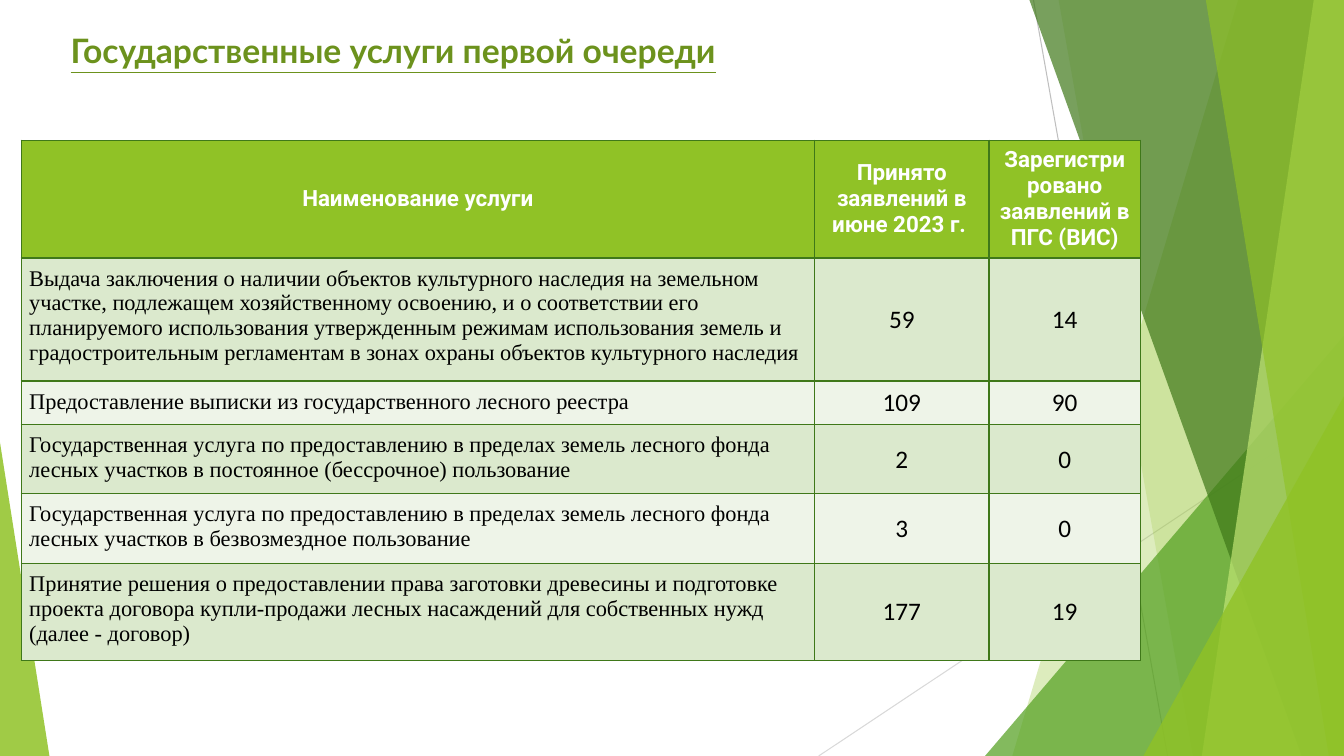
from dataclasses import dataclass

from lxml.etree import SubElement
from pptx import Presentation
from pptx.dml.color import RGBColor
from pptx.dml.fill import FillFormat
from pptx.enum.shapes import MSO_CONNECTOR as Conn, MSO_SHAPE as Kind
from pptx.enum.text import MSO_ANCHOR as Anchor, PP_ALIGN as Align
from pptx.oxml.ns import qn
from pptx.shapes.autoshape import Shape
from pptx.slide import Slide
from pptx.table import _Cell as Cell
from pptx.text.text import TextFrame
from pptx.util import Inches, Pt

LIME = RGBColor(0x90, 0xC2, 0x26)
LEAF = RGBColor(0x54, 0xA0, 0x21)
FOREST = RGBColor(0x3F, 0x78, 0x19)
PALE = RGBColor(0xC0, 0xE4, 0x74)
OLIVE = RGBColor(0x6C, 0x92, 0x1D)
MINT = RGBColor(0xDB, 0xE9, 0xCD)
MIST = RGBColor(0xEE, 0xF4, 0xE8)
GRAY = RGBColor(0xBF, 0xBF, 0xBF)
SILVER = RGBColor(0xD9, 0xD9, 0xD9)
WHITE = RGBColor(0xFF, 0xFF, 0xFF)
BLACK = RGBColor(0, 0, 0)
WIDE, HIGH = 13.33, 7.5


@dataclass
class Ray:
    start: tuple[float, float]
    end: tuple[float, float]
    color: RGBColor


@dataclass
class Band:
    top: float
    foot: float
    color: RGBColor
    alpha: int


@dataclass
class Wedge:
    left: float
    top: float
    width: float
    apex: float
    color: RGBColor
    alpha: int


@dataclass
class Style:
    font: str
    size: int
    color: RGBColor
    bold: bool
    align: Align
    anchor: Anchor
    inset: tuple[float, float, float, float]


@dataclass
class Row:
    height: float
    cells: tuple[str, str, str]


DECOR = [
    Ray((10.25, 0), (11.58, HIGH), GRAY),
    Ray((WIDE, 4.03), (8.12, HIGH), SILVER),
    Band(12.28, 10.04, LIME, 30),
    Band(10.5, 11.83, LIME, 20),
    Wedge(9.77, 3.33, 3.56, 1, LEAF, 72),
    Band(10.21, 12.91, FOREST, 70),
    Band(13.03, 11.92, PALE, 70),
    Band(11.96, 13.18, LIME, 65),
    Wedge(11.34, 3.93, 1.99, 1, LIME, 80),
    Wedge(0, 4.39, 0.49, 0, LIME, 85),
]

TITLE = Style("Lato", 24, OLIVE, True, Align.LEFT, Anchor.TOP, (0.1, 0.05, 0.1, 0.05))
HEAD = Style("Roboto", 16, WHITE, True, Align.CENTER, Anchor.MIDDLE, (0.1, 0.05, 0.1, 0.05))
NAME = Style("Times New Roman", 16, BLACK, False, Align.LEFT, Anchor.TOP, (0.08, 0.08, 0.12, 0.08))
COUNT = Style("Calibri", 18, BLACK, False, Align.CENTER, Anchor.MIDDLE, (0.01, 0.01, 0.01, 0))

COLS = [7.87, 1.73, 1.5]
ROWS = [
    Row(1.17, ("Наименование услуги", "Принято заявлений в июне 2023 г. ",
               "Зарегистрировано заявлений в ПГС (ВИС)")),
    Row(1.22, ("Выдача заключения о наличии объектов культурного наследия на земельном "
               "участке, подлежащем хозяйственному освоению, и о соответствии его "
               "планируемого использования утвержденным режимам использования земель и "
               "градостроительным регламентам в зонах охраны объектов культурного наследия",
               "59", "14")),
    Row(0.43, ("Предоставление выписки из государственного лесного реестра", "109", "90")),
    Row(0.69, ("Государственная услуга по предоставлению в пределах земель лесного фонда "
               "лесных участков в постоянное (бессрочное) пользование", "2", "0")),
    Row(0.69, ("Государственная услуга по предоставлению в пределах земель лесного фонда "
               "лесных участков в безвозмездное пользование", "3", "0")),
    Row(0.96, ("Принятие решения о предоставлении права заготовки древесины и подготовке "
               "проекта договора купли-продажи лесных насаждений для собственных нужд "
               "(далее - договор)", "177", "19")),
]


def paint(fill: FillFormat, color: RGBColor) -> None:
    fill.solid()
    fill.fore_color.rgb = color


def glaze(shape: Shape, color: RGBColor, alpha: int) -> None:
    shape.shadow.inherit = False
    shape.line.fill.background()
    paint(shape.fill, color)
    tint = shape.element.spPr.find(qn("a:solidFill"))[0]
    SubElement(tint, qn("a:alpha"), val=str(alpha * 1000))


def draw(slide: Slide, item: Ray | Band | Wedge) -> None:
    shapes = slide.shapes
    if isinstance(item, Ray):
        ends = [Inches(v) for v in (*item.start, *item.end)]
        line = shapes.add_connector(Conn.STRAIGHT, *ends)
        line.line.color.rgb = item.color
        line.line.width = Pt(0.75)
        SubElement(line.element.spPr, qn("a:effectLst"))
    elif isinstance(item, Band):
        pen = shapes.build_freeform(Inches(item.top), 0)
        spots = [(WIDE, 0), (WIDE, HIGH), (item.foot, HIGH)]
        pen.add_line_segments([(Inches(x), Inches(y)) for x, y in spots])
        glaze(pen.convert_to_shape(), item.color, item.alpha)
    else:
        box = [Inches(v) for v in (item.left, item.top, item.width, HIGH - item.top)]
        shape = shapes.add_shape(Kind.ISOSCELES_TRIANGLE, *box)
        shape.adjustments[0] = item.apex
        glaze(shape, item.color, item.alpha)


def write(frame: TextFrame, text: str, style: Style) -> None:
    frame.text = text
    para = frame.paragraphs[0]
    para.alignment = style.align
    font = para.runs[0].font
    font.name, font.size, font.bold = style.font, Pt(style.size), style.bold
    font.color.rgb = style.color


def place(box: TextFrame | Cell, style: Style) -> None:
    box.vertical_anchor = style.anchor
    box.margin_left, box.margin_top, box.margin_right, box.margin_bottom = map(Inches, style.inset)


def edge(cell: Cell) -> None:
    props = cell._tc.get_or_add_tcPr()
    for spot, side in enumerate(("lnL", "lnR", "lnT", "lnB")):
        line = props.makeelement(qn(f"a:{side}"), {"w": str(Pt(1))})
        solid = SubElement(line, qn("a:solidFill"))
        SubElement(solid, qn("a:srgbClr"), val=str(FOREST))
        props.insert(spot, line)


def add_title(slide: Slide) -> None:
    title = slide.shapes.title
    title.left, title.top, title.width, title.height = map(Inches, (0.6, 0.25, 9.42, 0.5))
    frame = title.text_frame
    frame.word_wrap = True
    write(frame, "Государственные услуги первой очереди", TITLE)
    place(frame, TITLE)
    frame.paragraphs[0].runs[0].font.underline = True


def add_grid(slide: Slide) -> None:
    size = (0.21, 1.39, sum(COLS), sum(row.height for row in ROWS))
    grid = slide.shapes.add_table(len(ROWS), len(COLS), *map(Inches, size)).table
    for col, width in zip(grid.columns, COLS):
        col.width = Inches(width)
    for r, row in enumerate(ROWS):
        grid.rows[r].height = Inches(row.height)
        shade = LIME if r == 0 else MINT if r % 2 else MIST
        for c, text in enumerate(row.cells):
            cell = grid.cell(r, c)
            style = HEAD if r == 0 else COUNT if c else NAME
            write(cell.text_frame, text, style)
            place(cell, style)
            paint(cell.fill, shade)
            edge(cell)


def main() -> None:
    deck = Presentation()
    deck.slide_width, deck.slide_height = Inches(WIDE), Inches(HIGH)
    slide = deck.slides.add_slide(deck.slide_layouts[5])
    for item in DECOR:
        draw(slide, item)
    add_title(slide)
    add_grid(slide)
    deck.save("out.pptx")


if __name__ == "__main__":
    main()
